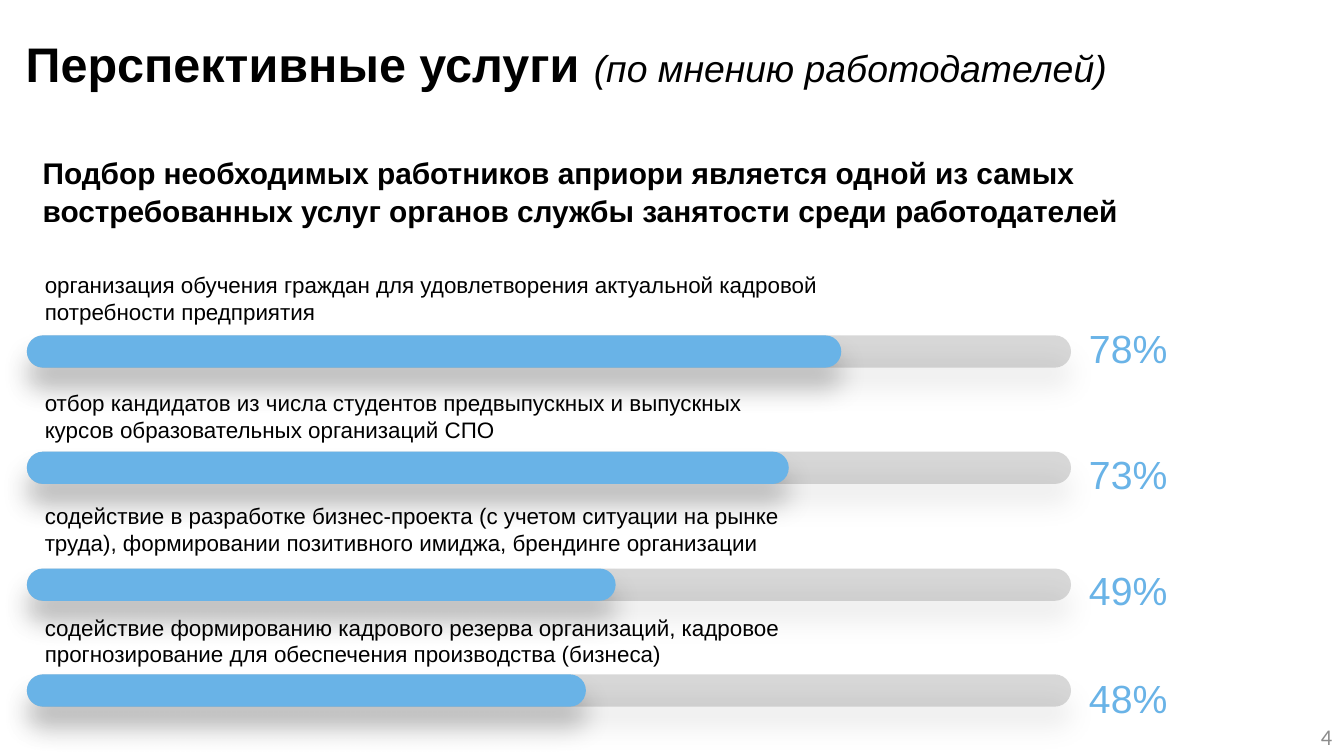
"""Build a slide of progress bars for services that employers find promising."""
from dataclasses import dataclass

from lxml import etree
from pptx import Presentation
from pptx.dml.color import RGBColor
from pptx.enum import shapes, text
from pptx.oxml import ns
from pptx.util import Pt

BLUE, GREY, BLACK = "69B3E7", "808080", "000000"
LEFT, TRACK, THICK = 14.4, 559.4, 17.3


@dataclass
class Row:
    """One service: its label, share and vertical places in points."""
    label: str
    share: str
    bar: float
    top: float
    mark: float
    fill: float
    wide: float = 436.3


ROWS = [
    Row("организация обучения граждан для удовлетворения актуальной кадровой "
        "потребности предприятия", "78%", 179.7, 140.4, 169.2, 436.3),
    Row("отбор кандидатов из числа студентов предвыпускных и выпускных "
        "курсов образовательных организаций СПО", "73%", 242, 203.8, 236.2, 408.2, 408.2),
    Row("содействие в разработке бизнес-проекта (с учетом ситуации на рынке "
        "труда), формировании позитивного имиджа, брендинге организации",
        "49%", 304.6, 264.2, 298.8, 315.4),
    Row("содействие формированию кадрового резерва организаций, кадровое "
        "прогнозирование для обеспечения производства (бизнеса)",
        "48%", 361.3, 324, 356.4, 299.5),
]


def paint(code: str) -> RGBColor:
    """Turn a hex string into a colour."""
    return RGBColor.from_string(code)


def style(font, size: float, code: str = BLACK, name: str = "Arial") -> None:
    """Set the face, size and colour of a font."""
    font.name, font.size = name, Pt(size)
    font.color.rgb = paint(code)


def write(slide, words: str, box: tuple, size: float, code: str = BLACK,
          name: str = "Arial", pad: tuple = (7.2, 3.6)):
    """Add a wrapped text box and return its frame."""
    frame = slide.shapes.add_textbox(*map(Pt, box)).text_frame
    frame.word_wrap = True
    frame.margin_left = frame.margin_right = Pt(pad[0])
    frame.margin_top = frame.margin_bottom = Pt(pad[1])
    line = frame.paragraphs[0]
    line.text = words
    style(line.font, size, code, name)
    return frame


def fade(parent, code: str, alpha: int) -> None:
    """Add a partly clear colour element."""
    tone = etree.SubElement(parent, ns.qn("a:srgbClr"), val=code)
    etree.SubElement(tone, ns.qn("a:alpha"), val=str(alpha * 1000))


def strip(slide, top: float, wide: float, code: str, alpha: int = 100) -> None:
    """Draw a rounded bar with a soft shadow below."""
    bar = slide.shapes.add_shape(shapes.MSO_SHAPE.ROUNDED_RECTANGLE,
                                 Pt(LEFT), Pt(top), Pt(wide), Pt(THICK))
    bar.adjustments[0] = 0.5
    bar.line.fill.background()
    bar.fill.solid()
    bar.fill.fore_color.rgb = paint(code)
    bar.shadow.inherit = False
    props = bar.element.spPr
    if alpha < 100:
        solid = props.find(ns.qn("a:solidFill"))
        solid.remove(solid[0])
        fade(solid, code, alpha)
    shade = etree.SubElement(props.find(ns.qn("a:effectLst")), ns.qn("a:outerShdw"),
                             blurRad=str(Pt(14)), dist=str(Pt(11)), dir="5400000",
                             algn="ctr", rotWithShape="0")
    fade(shade, BLACK, 22)


def head(slide) -> None:
    """Place and fill the title."""
    title = slide.shapes.title
    title.left, title.top, title.width, title.height = map(Pt, (2.9, 0.7, 601.2, 66.2))
    frame = title.text_frame
    frame.auto_size = text.MSO_AUTO_SIZE.NONE
    frame.vertical_anchor = text.MSO_ANCHOR.MIDDLE
    line = frame.paragraphs[0]
    line.alignment = text.PP_ALIGN.CENTER
    main, note = line.add_run(), line.add_run()
    main.text, note.text = "Перспективные услуги ", "(по мнению работодателей)"
    style(main.font, 26)
    style(note.font, 20)
    main.font.bold = note.font.italic = True


def draw(slide, row: Row) -> None:
    """Draw one service with its track, bar, share and label."""
    strip(slide, row.bar, TRACK, GREY, 30)
    strip(slide, row.bar, row.fill, BLUE)
    pad = (9.6, 4.8)
    write(slide, row.share, (LEFT + TRACK, row.mark, 132.5, 61.2), 21, BLUE, pad=pad)
    write(slide, row.label, (LEFT, row.top, row.wide, 38.9), 12, pad=pad)


def main() -> None:
    """Build and save the slide."""
    deck = Presentation()
    deck.slide_width, deck.slide_height = Pt(720), Pt(405)
    slide = deck.slides.add_slide(deck.slide_layouts.get_by_name("Title Only"))
    head(slide)
    lead = write(slide, "Подбор необходимых работников априори является одной из самых\v"
                 "востребованных услуг органов службы занятости среди работодателей",
                 (15.8, 77.8, 650.2, 50.4), 16).paragraphs[0]
    lead.font.bold = True
    lead.line_spacing, lead.space_after = 1.07, Pt(6)
    for row in ROWS:
        draw(slide, row)
    page = write(slide, "4", (553, 383.8, 167.8, 21.6), 12, "8C8C8C", "Calibri")
    page.vertical_anchor = text.MSO_ANCHOR.MIDDLE
    page.paragraphs[0].alignment = text.PP_ALIGN.RIGHT
    deck.save("out.pptx")


if __name__ == "__main__":
    main()
